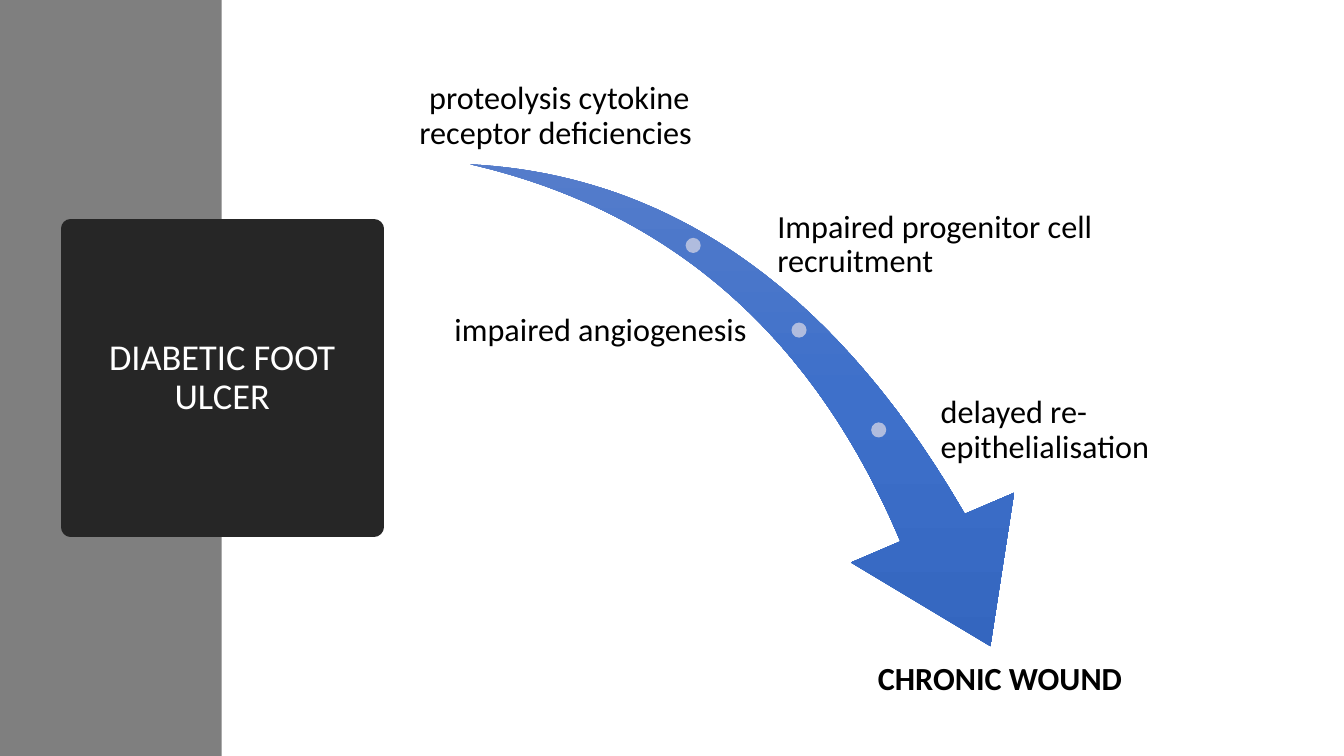
import dataclasses

import lxml.etree
import pptx
import pptx.dml.color
import pptx.enum.shapes
import pptx.enum.text
import pptx.oxml.ns
import pptx.util

Inches = pptx.util.Inches
Preset = pptx.enum.shapes.MSO_SHAPE
Align = pptx.enum.text.PP_ALIGN
Anchor = pptx.enum.text.MSO_ANCHOR
qn = pptx.oxml.ns.qn


@dataclasses.dataclass(frozen=True)
class Theme:
    font: str = "Calibri"
    title_size: int = 26
    label_size: int = 23
    title_text: str = "FFFFFF"
    label_text: str = "000000"
    sidebar: str = "7F7F7F"
    title_box: str = "262626"
    marker: str = "B0BCDE"
    arrow_stops: tuple = ((0, "6183CB"), (50, "3E70CA"), (100, "3062BB"))


THEME = Theme()


def rgb(color):
    return pptx.dml.color.RGBColor.from_string(color)


def add_preset(slide, preset, box, fill=None):
    shape = slide.shapes.add_shape(preset, *map(Inches, box))
    shape.shadow.inherit = False
    shape.line.fill.background()
    if fill:
        shape.fill.solid()
        shape.fill.fore_color.rgb = rgb(fill)
    return shape


def write_text(shape, text, size=THEME.label_size, color=THEME.label_text, bold=False,
               align=Align.LEFT, anchor=Anchor.MIDDLE, inset=0.03):
    frame = shape.text_frame
    frame.word_wrap = True
    frame.vertical_anchor = anchor
    frame.margin_left = frame.margin_right = Inches(inset)
    frame.margin_top = frame.margin_bottom = Inches(inset)
    paragraph = frame.paragraphs[0]
    paragraph.alignment = align
    paragraph.line_spacing = 0.9
    run = paragraph.add_run()
    run.text = text
    run.font.name = THEME.font
    run.font.size = pptx.util.Pt(size)
    run.font.bold = bold
    run.font.color.rgb = rgb(color)


def add_label(slide, box, text, **text_format):
    write_text(slide.shapes.add_textbox(*map(Inches, box)), text, **text_format)


def add_title(slide, box, text):
    title = add_preset(slide, Preset.RECTANGLE, box, THEME.title_box)
    title.line.color.rgb = rgb(THEME.title_box)
    title.line.width = pptx.util.Pt(13.75)
    outline = title.line.fill._xPr
    lxml.etree.SubElement(outline, qn("a:round"))
    write_text(title, text, size=THEME.title_size, color=THEME.title_text,
               align=Align.CENTER, inset=0.1)


def add_swoosh(slide, box, rotation):
    swoosh = add_preset(slide, Preset.SWOOSH_ARROW, box)
    swoosh.rotation = rotation
    swoosh.adjustments[0] = 0.163
    swoosh.adjustments[1] = 0.314
    swoosh.fill.gradient()
    gradient = swoosh._element.spPr.find(qn("a:gradFill"))
    gradient.set("rotWithShape", "0")
    stops = gradient.find(qn("a:gsLst"))
    for stop in list(stops):
        stops.remove(stop)
    for percent, color in THEME.arrow_stops:
        stop = lxml.etree.SubElement(stops, qn("a:gs"), pos=str(percent * 1000))
        lxml.etree.SubElement(stop, qn("a:srgbClr"), val=color)
    gradient.find(qn("a:lin")).set("ang", "5400000")


def main():
    deck = pptx.Presentation()
    deck.slide_width, deck.slide_height = Inches(13.33), Inches(7.5)
    slide = deck.slides.add_slide(deck.slide_layouts[6])

    add_preset(slide, Preset.RECTANGLE, (0, 0, 2.2, 7.5), THEME.sidebar)
    add_title(slide, (0.7, 2.27, 3.01, 2.96), "DIABETIC FOOT ULCER")
    add_swoosh(slide, (4.53, 1.81, 6.06, 4.23), 73.3)
    for left, top in ((6.8, 2.36), (7.85, 3.2), (8.64, 4.19)):
        add_preset(slide, Preset.OVAL, (left, top, 0.15, 0.15), THEME.marker)

    add_label(slide, (4.12, 0.41, 2.86, 1.12), "proteolysis cytokine receptor deficiencies ",
              align=Align.CENTER, anchor=Anchor.BOTTOM)
    add_label(slide, (7.68, 1.87, 4.17, 1.12), "Impaired progenitor cell recruitment")
    add_label(slide, (4.12, 2.72, 3.32, 1.12), "impaired angiogenesis", align=Align.RIGHT)
    add_label(slide, (9.3, 3.71, 2.55, 1.12), "delayed re-epithelialisation")
    add_label(slide, (7.99, 6.54, 3.86, 0.65), "CHRONIC WOUND", bold=True,
              align=Align.CENTER, anchor=Anchor.TOP)

    deck.save("out.pptx")


if __name__ == "__main__":
    main()
